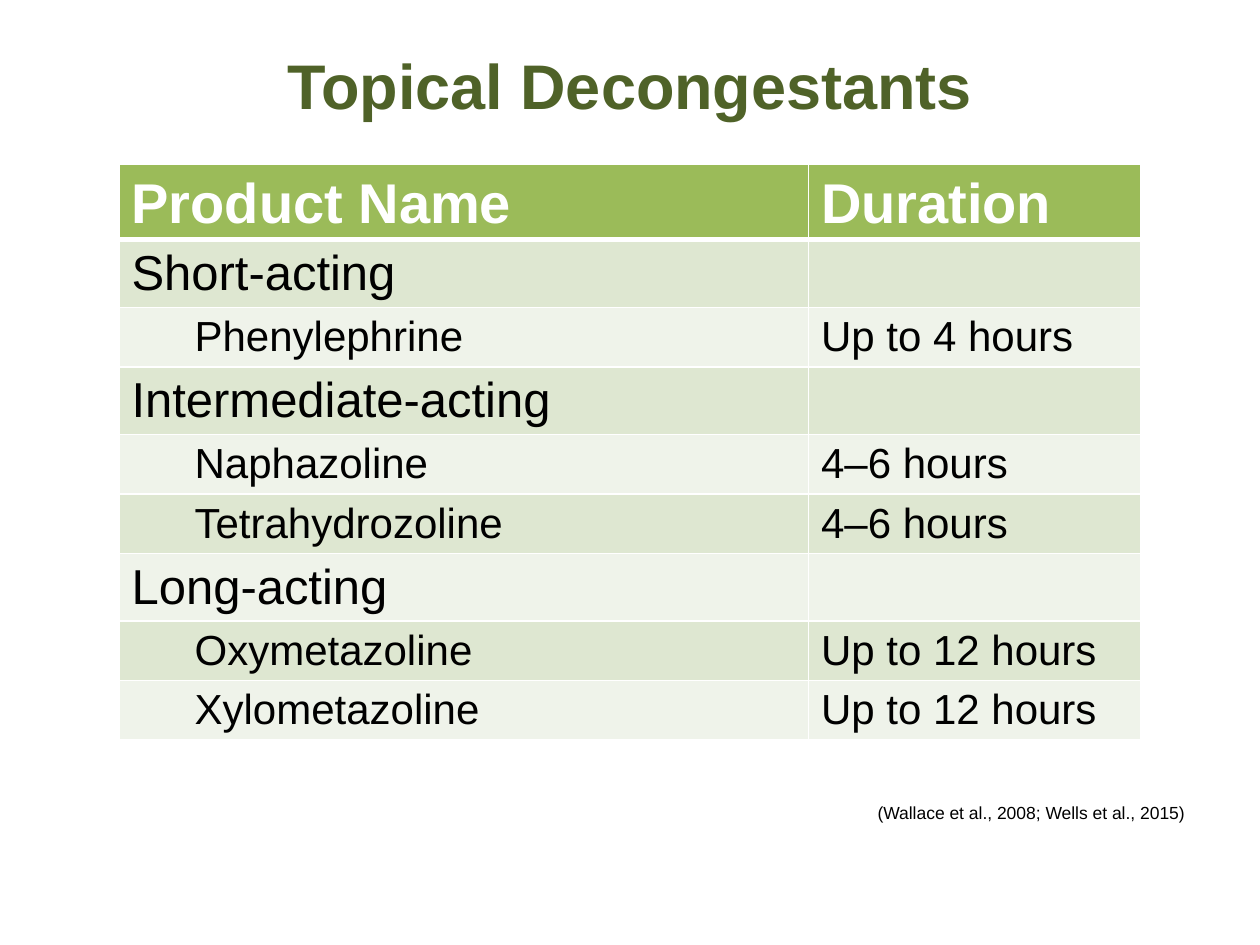
from pptx import Presentation
from pptx.dml.color import RGBColor as RGB
from pptx.enum.text import MSO_ANCHOR as Anchor, PP_ALIGN as Align
from pptx.oxml import parse_xml
from pptx.oxml.ns import nsdecls
from pptx.util import Pt

OLIVE = RGB(0x4F, 0x62, 0x28)
GREEN = RGB(0x9B, 0xBB, 0x59)
DARK = RGB(0xDE, 0xE7, 0xD1)
LIGHT = RGB(0xEF, 0xF3, 0xEA)
WHITE = RGB(0xFF, 0xFF, 0xFF)
BLACK = RGB(0, 0, 0)

# Text size of a row and its height
HEAD, GROUP, ITEM = 32, 28, 24
HIGH = {HEAD: 42.4, GROUP: 38.4, ITEM: 34}

ROWS = [
    (HEAD, "Product Name", "Duration"),
    (GROUP, "Short-acting", ""),
    (ITEM, "Phenylephrine", "Up to 4 hours"),
    (GROUP, "Intermediate-acting", ""),
    (ITEM, "Naphazoline", "4–6 hours"),
    (ITEM, "Tetrahydrozoline", "4–6 hours"),
    (GROUP, "Long-acting", ""),
    (ITEM, "Oxymetazoline", "Up to 12 hours"),
    (ITEM, "Xylometazoline", "Up to 12 hours"),
]


class Deck:
    def __init__(self, slide, font="Arial"):
        self.slide = slide
        self.font = font

    def run(self, para, text, size, color, bold=False):
        run = para.add_run()
        run.text = text
        font = run.font
        font.name, font.size, font.bold = self.font, Pt(size), bold
        font.color.rgb = color

    def text(self, box, text, size, color, align, anchor, bold=False, top=3.6):
        frame = self.slide.shapes.add_textbox(*map(Pt, box)).text_frame
        frame.word_wrap = True
        frame.vertical_anchor = anchor
        frame.margin_top = Pt(top)
        para = frame.paragraphs[0]
        para.alignment = align
        self.run(para, text, size, color, bold)

    def edge(self, cell, low):
        """Draw white cell borders, the bottom one low points wide."""
        props = cell._tc.get_or_add_tcPr()
        widths = {"lnL": 1, "lnR": 1, "lnT": 1, "lnB": low}
        for spot, (tag, wide) in enumerate(widths.items()):
            props.insert(spot, parse_xml(
                f'<a:{tag} {nsdecls("a")} w="{Pt(wide)}"><a:solidFill>'
                f'<a:srgbClr val="{WHITE}"/></a:solidFill></a:{tag}>'))

    def cell(self, cell, text, size, fill, dent):
        head = size == HEAD
        cell.fill.solid()
        cell.fill.fore_color.rgb = fill
        cell.vertical_anchor = Anchor.BOTTOM if head else Anchor.MIDDLE
        cell.margin_top = cell.margin_bottom = Pt(2.5)
        self.edge(cell, 3 if head else 1)
        if not text:
            return
        para = cell.text_frame.paragraphs[0]
        if dent:
            para.level = 1
            props = para._p.get_or_add_pPr()
            props.set("marL", str(Pt(36)))
            props.set("indent", "0")
        self.run(para, text, size, WHITE if head else BLACK, head)

    def table(self, left, top, cols, rows):
        high = sum(HIGH[size] for size, *_ in rows)
        box = map(Pt, (left, top, sum(cols), high))
        grid = self.slide.shapes.add_table(len(rows), len(cols), *box).table
        for col, wide in zip(grid.columns, cols):
            col.width = Pt(wide)
        for i, (size, *texts) in enumerate(rows):
            grid.rows[i].height = Pt(HIGH[size])
            fill = GREEN if size == HEAD else DARK if i % 2 else LIGHT
            for j, text in enumerate(texts):
                dent = size == ITEM and j == 0
                self.cell(grid.cell(i, j), text, size, fill, dent)


def main():
    prs = Presentation()
    prs.slide_width, prs.slide_height = Pt(720), Pt(540)
    deck = Deck(prs.slides.add_slide(prs.slide_layouts[6]))
    deck.text((36, 18.7, 648, 90), "Topical Decongestants", 36, OLIVE,
              Align.CENTER, Anchor.TOP, bold=True, top=7.6)
    deck.table(68, 93.6, (394, 190), ROWS)
    deck.text((470, 445.7, 214, 28), "(Wallace et al., 2008; Wells et al., 2015)",
              10, BLACK, Align.RIGHT, Anchor.BOTTOM)
    prs.save("out.pptx")


if __name__ == "__main__":
    main()
